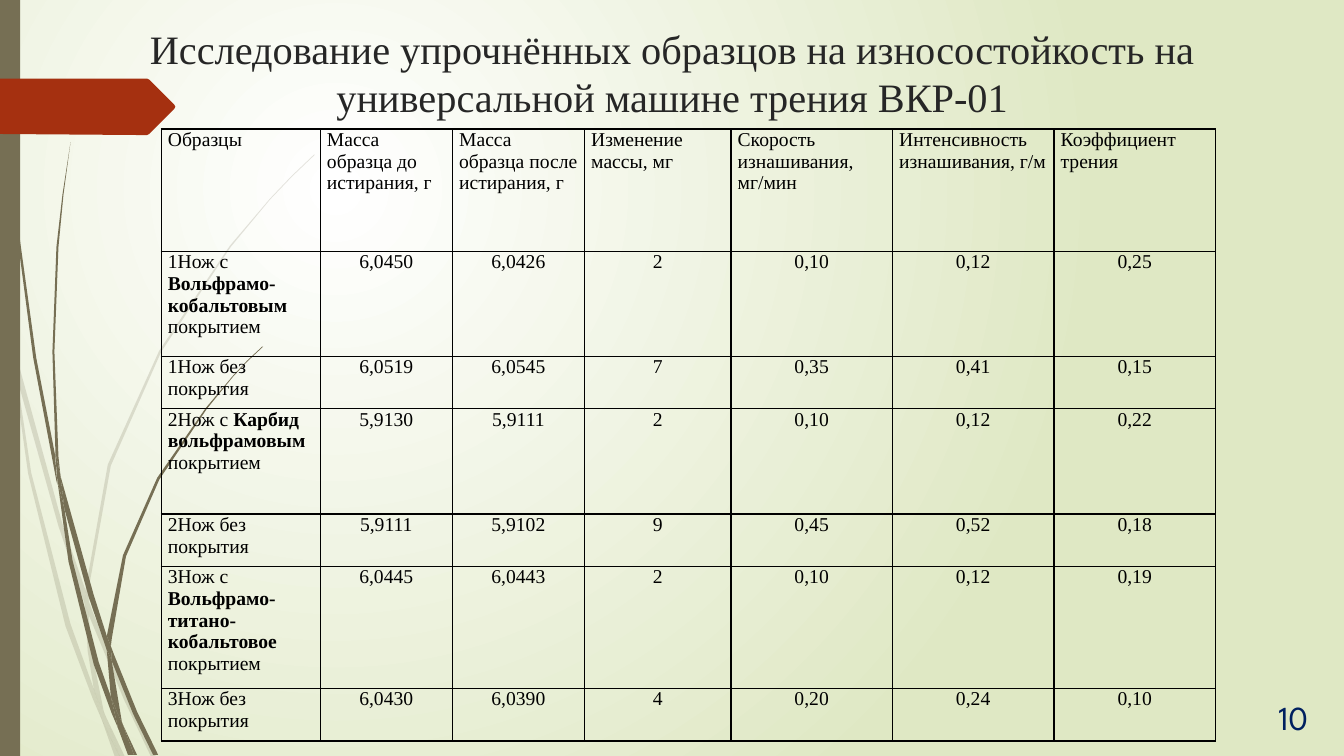
from lxml import etree
from pptx import Presentation
from pptx.dml.color import RGBColor
from pptx.enum.text import MSO_ANCHOR as Anchor, PP_ALIGN as Align
from pptx.enum.shapes import MSO_SHAPE as Shape
from pptx.oxml import parse_xml
from pptx.oxml.ns import nsdecls, qn
from pptx.util import Cm, Pt

COLORS = {"stem": "766F54", "arrow": "A53010", "title": "262626", "number": "002060",
          "text": "000000", "glow": "FFFFFF", "edge": "DFE8C4"}
SERIF = "Times New Roman"
OUTLINE_UNIT = Cm(0.0254)

PALE_STEMS = [
    [(11, 350), (9, 322), (0, 282), (0, 299), (10, 344)],
    [(58, 522), (84, 599), (85, 586), (62, 520), (14, 345), (17, 376)],
    [(92, 607), (88, 596), (88, 610), (123, 694), (150, 751), (155, 751), (127, 692)],
    [(119, 751), (124, 751), (105, 711)],
    [(93, 683), (70, 619), (31, 469), (17, 376), (11, 350), (28, 470), (65, 621), (92, 693),
     (101, 714), (99, 707)],
    [(84, 599), (87, 646), (93, 683), (96, 692), (105, 711), (103, 706), (91, 646), (88, 610),
     (88, 608)],
    [(88, 584), (110, 462), (160, 349), (229, 245), (268, 198), (290, 175), (312, 154), (312, 153),
     (289, 175), (268, 197), (228, 244), (158, 348), (107, 461), (85, 584), (85, 586), (88, 596)],
    [(101, 714), (114, 751), (119, 751)],
    [(88, 608), (88, 610), (88, 596), (85, 586), (84, 599)],
    [(96, 692), (93, 683), (99, 707), (101, 714), (119, 751), (105, 711)],
]
DARK_STEMS = [
    [(7, 110), (17, 233), (33, 355), (56, 477), (57, 481), (55, 457), (55, 453), (36, 355),
     (19, 232), (8, 109), (5, 48), (4, 0), (3, 0), (4, 48)],
    [(88, 592), (106, 645), (106, 633), (106, 631), (93, 590), (60, 472), (64, 505)],
    [(113, 649), (110, 641), (111, 656), (132, 708), (152, 749), (157, 749), (136, 706)],
    [(110, 691), (98, 657), (72, 556), (64, 505), (57, 477), (68, 557), (93, 659), (111, 708),
     (117, 722), (116, 717)],
    [(60, 472), (58, 453), (54, 349), (58, 245), (63, 193), (70, 141), (62, 193), (56, 245),
     (52, 349), (55, 449)],
    [(133, 749), (136, 749), (122, 719)],
    [(57, 477), (64, 505), (60, 472), (55, 449), (55, 453)],
    [(111, 633), (125, 552), (158, 476), (205, 406), (231, 374), (245, 359), (261, 344), (260, 344),
     (245, 358), (231, 373), (204, 405), (156, 474), (122, 551), (106, 631), (110, 641)],
    [(117, 722), (127, 749), (131, 749)],
    [(106, 645), (110, 691), (116, 706), (122, 719), (121, 716), (111, 656), (109, 651)],
    [(106, 645), (109, 651), (111, 656), (110, 641), (106, 631), (106, 633)],
    [(116, 706), (110, 691), (116, 717), (117, 722), (130, 749), (133, 749), (122, 719)],
]
ARROW = [(0, 78), (146, 78), (148, 79), (173, 104), (174, 106), (173, 108), (148, 133),
         (146, 134), (136, 134), (0, 133)]

TITLE = "Исследование упрочнённых образцов на износостойкость на универсальной машине трения ВКР-01"
COLUMN_WIDTHS = [4.01, 3.33, 3.33, 3.69, 4.07, 4.07, 4.07]
ROW_HEIGHTS = [3.08, 2.65, 1.32, 2.65, 1.32, 3.08, 1.32]
WEAR_RESULTS = [
    ["Образцы", "Масса образца до истирания, г", "Масса образца после истирания, г",
     "Изменение массы, мг", "Скорость изнашивания, мг/мин", "Интенсивность изнашивания, г/м",
     "Коэффициент трения"],
    ["1Нож с *Вольфрамо-кобальтовым *покрытием", "6,0450", "6,0426", "2", "0,10", "0,12", "0,25"],
    ["1Нож без покрытия", "6,0519", "6,0545", "7", "0,35", "0,41", "0,15"],
    ["2Нож с *Карбид вольфрамовым *покрытием", "5,9130", "5,9111", "2", "0,10", "0,12", "0,22"],
    ["2Нож без покрытия", "5,9111", "5,9102", "9", "0,45", "0,52", "0,18"],
    ["3Нож с *Вольфрамо-титано-кобальтовое *покрытием", "6,0445", "6,0443", "2", "0,10", "0,12",
     "0,19"],
    ["3Нож без покрытия", "6,0430", "6,0390", "4", "0,20", "0,24", "0,10"],
]


def rgb(role):
    """Return the colour that plays the given role."""
    return RGBColor.from_string(COLORS[role])


def paint(shape, role, opacity=100):
    """Fill a shape with one colour, without line or shadow."""
    shape.shadow.inherit = False
    shape.line.fill.background()
    shape.fill.solid()
    shape.fill.fore_color.rgb = rgb(role)
    if opacity < 100:
        color = shape.fill._xPr.find(".//" + qn("a:srgbClr"))
        etree.SubElement(color, qn("a:alpha")).set("val", str(opacity * 1000))


def style(paragraph, size, role, font, align):
    """Set the font and alignment of a paragraph."""
    paragraph.alignment = align
    paragraph.font.size = Pt(size)
    paragraph.font.name = font
    paragraph.font.color.rgb = rgb(role)


def set_background(slide):
    """Spread a round glow from the upper left over the slide."""
    fill = slide.background.fill
    fill.gradient()
    for stop, role in zip(fill.gradient_stops, ("glow", "edge")):
        stop.color.rgb = rgb(role)
    gradient = slide._element.find(".//" + qn("a:gradFill"))
    direction = gradient.find(qn("a:lin"))
    gradient.replace(direction, parse_xml(
        f'<a:path {nsdecls("a")} path="circle">'
        '<a:fillToRect l="50000" t="50000" r="100000" b="100000"/></a:path>'))


def add_outline(slide, left, top, points, role, opacity=100):
    """Draw one closed outline from the given corner."""
    builder = slide.shapes.build_freeform(*points[0], scale=OUTLINE_UNIT)
    builder.add_line_segments(points[1:], close=True)
    paint(builder.convert_to_shape(left, top), role, opacity)


def add_decoration(slide, left, top, width, height):
    """Place the grass stems, the side bar and the arrow."""
    for stems, opacity in ((PALE_STEMS, 20), (DARK_STEMS, 100)):
        for stem in stems:
            add_outline(slide, left, top, stem, "stem", opacity)
    paint(slide.shapes.add_shape(Shape.RECTANGLE, left, top, width, height), "stem")
    add_outline(slide, left, top, ARROW, "arrow")


def add_text(slide, left, top, width, height, text, size, role, font, anchor):
    """Place a centred line of text in a box and return its paragraph."""
    frame = slide.shapes.add_textbox(left, top, width, height).text_frame
    frame.word_wrap = True
    frame.vertical_anchor = anchor
    paragraph = frame.paragraphs[0]
    paragraph.text = text
    style(paragraph, size, role, font, Align.CENTER)
    return paragraph


def add_borders(cell):
    """Draw a thin line on each side of a cell."""
    properties = cell._tc.get_or_add_tcPr()
    for position, side in enumerate(("lnL", "lnR", "lnT", "lnB")):
        properties.insert(position, parse_xml(
            f'<a:{side} {nsdecls("a")} w="{Pt(1)}"><a:solidFill>'
            f'<a:srgbClr val="{COLORS["text"]}"/></a:solidFill></a:{side}>'))


def fill_cell(cell, text, align):
    """Write a cell, with the parts between asterisks in bold."""
    cell.fill.background()
    cell.margin_left = cell.margin_right = Cm(0.17)
    cell.margin_top = cell.margin_bottom = 0
    paragraph = cell.text_frame.paragraphs[0]
    style(paragraph, 14, "text", SERIF, align)
    for index, part in enumerate(text.split("*")):
        run = paragraph.add_run()
        run.text = part
        run.font.bold = index % 2 == 1
    add_borders(cell)


def add_wear_table(slide, left, top, width, height):
    """Place the table of wear test results."""
    table = slide.shapes.add_table(len(ROW_HEIGHTS), len(COLUMN_WIDTHS),
                                   left, top, width, height).table
    table.first_row = table.horz_banding = False
    for column, column_width in zip(table.columns, COLUMN_WIDTHS):
        column.width = Cm(column_width)
    for r, (row_height, texts) in enumerate(zip(ROW_HEIGHTS, WEAR_RESULTS)):
        table.rows[r].height = Cm(row_height)
        for c, text in enumerate(texts):
            fill_cell(table.cell(r, c), text, Align.CENTER if r and c else Align.LEFT)


def main():
    """Build and save the slide."""
    deck = Presentation()
    deck.slide_width, deck.slide_height = Cm(33.87), Cm(19.05)
    slide = deck.slides.add_slide(deck.slide_layouts[6])
    set_background(slide)
    add_decoration(slide, 0, 0, Cm(0.51), deck.slide_height)
    add_text(slide, Cm(2.34), Cm(0.41), Cm(29.21), Cm(2.84), TITLE, 28.8, "title", SERIF,
             Anchor.MIDDLE)
    number = add_text(slide, Cm(31.32), Cm(17.55), Cm(2.54), Cm(1.5), "10", 24, "number",
                      "League Spartan", Anchor.TOP)
    number.line_spacing = 0.9
    number.space_before = Pt(10)
    add_wear_table(slide, Cm(4.06), Cm(3.25), Cm(sum(COLUMN_WIDTHS)), Cm(sum(ROW_HEIGHTS)))
    deck.save("out.pptx")


if __name__ == "__main__":
    main()
